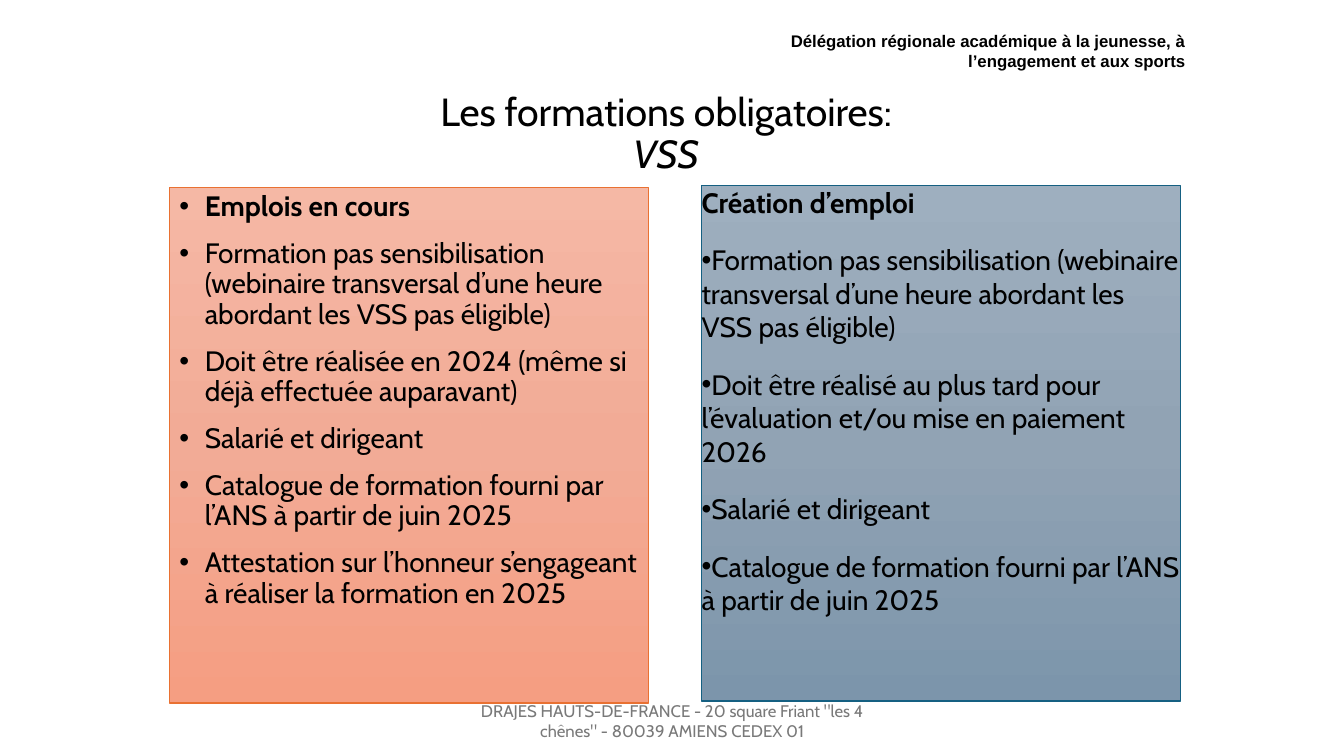
import copy
from dataclasses import dataclass

import pptx
import pptx.dml.color
import pptx.enum.shapes
import pptx.enum.text
import pptx.oxml
import pptx.oxml.ns
import pptx.util
from pptx.util import Cm

ALIGN = pptx.enum.text.PP_ALIGN
ANCHOR = pptx.enum.text.MSO_ANCHOR
AUTO = pptx.enum.text.MSO_AUTO_SIZE
qn = pptx.oxml.ns.qn


@dataclass
class Box:
    left: float
    top: float
    width: float
    height: float


@dataclass
class Style:
    size: float
    font: str = "Cabin"
    color: str = "000000"
    bold: bool = False
    italic: bool = False


@dataclass
class Panel:
    box: Box
    stops: tuple[str, str, str]
    border: str
    heading: str
    items: list[str]
    heading_bullet: bool
    hanging: float
    line_spacing: float
    space_after: float
    margins: tuple[float, float]


PANELS = [
    Panel(
        Box(4.27, 4.72, 12.07, 13), ("F5B8A5", "F2AB96", "F59E82"), "E97132",
        "Emplois en cours",
        [
            "Formation pas sensibilisation (webinaire transversal d’une heure abordant les VSS pas éligible)",
            "Doit être réalisée en 2024 (même si déjà effectuée auparavant)",
            "Salarié et dirigeant",
            "Catalogue de formation fourni par l’ANS à partir de juin 2025",
            "Attestation sur l’honneur s’engageant à réaliser la formation en 2025",
        ],
        heading_bullet=True, hanging=0.64, line_spacing=0.9, space_after=0, margins=(0.25, 0.13),
    ),
    Panel(
        Box(17.68, 4.67, 12.07, 13), ("9EAFBF", "91A3B4", "7C95AB"), "156082",
        "Création d’emploi",
        [
            "Formation pas sensibilisation (webinaire transversal d’une heure abordant les VSS pas éligible)",
            "Doit être réalisé au plus tard pour l’évaluation et/ou mise en paiement 2026",
            "Salarié et dirigeant",
            "Catalogue de formation fourni par l’ANS à partir de juin 2025",
        ],
        heading_bullet=False, hanging=0, line_spacing=1, space_after=5, margins=(0, 0),
    ),
]


def rgb(value: str) -> pptx.dml.color.RGBColor:
    return pptx.dml.color.RGBColor.from_string(value)


def place(sp, box: Box) -> None:
    sp.left, sp.top = Cm(box.left), Cm(box.top)
    sp.width, sp.height = Cm(box.width), Cm(box.height)


def add_run(p, text: str, style: Style) -> None:
    r = p.add_run()
    r.text = text
    r.font.name, r.font.size = style.font, pptx.util.Pt(style.size)
    r.font.bold, r.font.italic = style.bold, style.italic
    r.font.color.rgb = rgb(style.color)


def set_bullet(p, shown: bool, hanging: float) -> None:
    pPr = p._p.get_or_add_pPr()
    pPr.set("marL", str(Cm(hanging)))
    pPr.set("indent", str(-Cm(hanging)))
    if shown:
        font = pptx.oxml.parse_xml(f'<a:buFont {pptx.oxml.ns.nsdecls("a")} typeface="Arial"/>')
        mark = pptx.oxml.parse_xml(f'<a:buChar {pptx.oxml.ns.nsdecls("a")} char="•"/>')
        pPr.extend([font, mark])


def fill_gradient(sp, colors: tuple[str, str, str]) -> None:
    """Fill from top to bottom with three evenly spaced colours."""
    sp.fill.gradient()
    sp.fill.gradient_angle = 270
    stop_list = sp._element.spPr.find(qn("a:gradFill")).find(qn("a:gsLst"))
    stop_list.insert(1, copy.deepcopy(stop_list[0]))
    for i, (stop, color) in enumerate(zip(sp.fill.gradient_stops, colors)):
        stop.position = i / 2
        stop.color.rgb = rgb(color)


def format_panel(sp, panel: Panel) -> None:
    place(sp, panel.box)
    fill_gradient(sp, panel.stops)
    sp.line.color.rgb = rgb(panel.border)
    sp.line.width = pptx.util.Pt(1)
    sp.shadow.inherit = False

    tf = sp.text_frame
    tf.word_wrap, tf.auto_size = True, AUTO.NONE
    tf.vertical_anchor = ANCHOR.TOP
    side, edge = panel.margins
    tf.margin_left = tf.margin_right = Cm(side)
    tf.margin_top = tf.margin_bottom = Cm(edge)
    for i, text in enumerate([panel.heading, *panel.items]):
        p = tf.add_paragraph() if i else tf.paragraphs[0]
        p.alignment = ALIGN.LEFT
        p.line_spacing = panel.line_spacing
        p.space_before = pptx.util.Pt(12)
        p.space_after = pptx.util.Pt(panel.space_after)
        set_bullet(p, i > 0 or panel.heading_bullet, panel.hanging)
        add_run(p, text, Style(20, bold=i == 0))


def add_note(s, box: Box, text: str, style: Style, align, anchor, auto_size) -> None:
    sp = s.shapes.add_textbox(Cm(box.left), Cm(box.top), Cm(box.width), Cm(box.height))
    tf = sp.text_frame
    tf.word_wrap, tf.auto_size = True, auto_size
    tf.vertical_anchor = anchor
    tf.paragraphs[0].alignment = align
    add_run(tf.paragraphs[0], text, style)


def format_title(sp) -> None:
    place(sp, Box(4.11, 2.06, 25.35, 2.67))
    tf = sp.text_frame
    tf.word_wrap, tf.auto_size = True, AUTO.NONE
    tf.vertical_anchor = ANCHOR.MIDDLE
    p = tf.paragraphs[0]
    p.alignment, p.line_spacing = ALIGN.CENTER, 0.9
    add_run(p, "Les formations obligatoires:", Style(28))
    p.add_line_break()
    add_run(p, "VSS", Style(28, italic=True))


def main() -> None:
    prs = pptx.Presentation()
    prs.slide_width, prs.slide_height = Cm(33.87), Cm(19.05)
    s = prs.slides.add_slide(prs.slide_layouts[1])
    format_title(s.shapes.title)
    add_note(
        s, Box(11.23, 17.65, 11.43, 1.02),
        'DRAJES HAUTS-DE-FRANCE - 20 square Friant "les 4 chênes" - 80039 AMIENS CEDEX 01',
        Style(12, color="797979"), ALIGN.CENTER, ANCHOR.MIDDLE, AUTO.NONE,
    )
    current, creation = PANELS
    format_panel(s.placeholders[1], current)
    rectangle = pptx.enum.shapes.MSO_SHAPE.RECTANGLE
    format_panel(s.shapes.add_shape(rectangle, 0, 0, 0, 0), creation)
    add_note(
        s, Box(17.53, 0.64, 12.6, 1.27),
        "Délégation régionale académique à la jeunesse, à l’engagement et aux sports",
        Style(12, font="Arial", bold=True), ALIGN.RIGHT, ANCHOR.TOP, AUTO.SHAPE_TO_FIT_TEXT,
    )
    prs.save("out.pptx")


if __name__ == "__main__":
    main()
